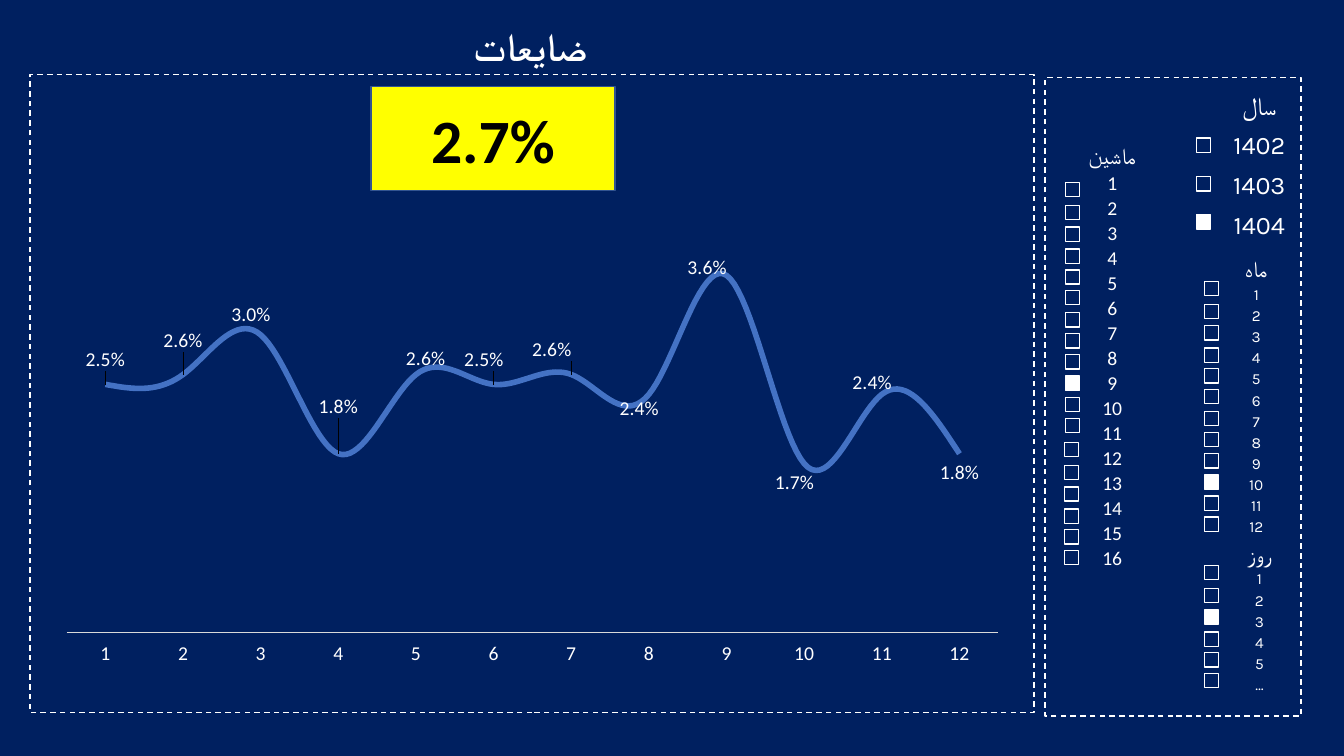
"""Build the waste dashboard slide with its filters, headline figure and monthly line chart."""
from dataclasses import dataclass

from lxml.etree import SubElement
from pptx import Presentation
from pptx.chart.chart import Chart
from pptx.chart.data import CategoryChartData
from pptx.dml.color import RGBColor
from pptx.enum.chart import XL_CHART_TYPE as ChartType
from pptx.enum.chart import XL_LABEL_POSITION as LabelPosition
from pptx.enum.chart import XL_TICK_LABEL_POSITION as TickLabels
from pptx.enum.chart import XL_TICK_MARK as TickMark
from pptx.enum.dml import MSO_LINE as Dash
from pptx.enum.shapes import MSO_SHAPE as ShapeKind
from pptx.enum.text import MSO_ANCHOR as Anchor
from pptx.enum.text import MSO_AUTO_SIZE as AutoSize
from pptx.enum.text import PP_ALIGN as Align
from pptx.oxml import parse_xml
from pptx.oxml.ns import nsdecls, qn
from pptx.shapes.autoshape import Shape
from pptx.slide import Slide
from pptx.text.text import Font, _Paragraph as Paragraph
from pptx.util import Cm, Pt

WHITE, NAVY, BLUE = "FFFFFF", "002060", "4472C4"
PLAIN_TABLE = "{2D5ABB26-0587-4C30-8999-92F81FD0307C}"
BOX_SIZE = 0.36
BOX_OFFSETS = (0, 0.58, 1.12, 1.68, 2.2, 2.72, 3.28, 3.81, 4.34, 4.88, 5.41, 5.94)
YEAR_OFFSETS = (0, 0.97, 1.93)


@dataclass
class Panel:
    left: float
    top: float
    width: float
    height: float
    line: str = WHITE
    fill: str | None = None
    dashed: bool = False


@dataclass
class Filter:
    heading: str
    options: list[str]
    left: float
    top: float
    width: float
    heading_height: float
    row_height: float
    heading_size: int
    size: int
    font: str = "Karla"
    anchor: Anchor = Anchor.BOTTOM


@dataclass
class CheckColumn:
    left: float
    top: float
    offsets: tuple[float, ...]
    ticked: int | None = None


@dataclass
class MonthPoint:
    value: float
    shift_x: float
    shift_y: float


def numbers(last: int) -> list[str]:
    return [str(number) for number in range(1, last + 1)]


FILTERS = [
    Filter("سال", ["1402", "1403", "1404"], 30.81, 2.18, 1.85, 1, 1, 18, 18, anchor=Anchor.MIDDLE),
    Filter("ماه", numbers(12), 30.81, 6.45, 1.7, 0.53, 0.53, 16, 11),
    Filter("روز", numbers(5) + ["…"], 30.89, 13.61, 1.7, 0.53, 0.53, 16, 11),
    Filter("ماشین", numbers(16), 27.18, 3.58, 1.7, 0.71, 0.63, 16, 14, font="Calibri"),
]
CHECK_COLUMNS = [
    CheckColumn(30.15, 3.48, YEAR_OFFSETS, ticked=2),
    CheckColumn(30.35, 7.09, BOX_OFFSETS, ticked=9),
    CheckColumn(30.35, 14.25, BOX_OFFSETS[:6], ticked=2),
    CheckColumn(26.85, 4.6, BOX_OFFSETS, ticked=9),
    CheckColumn(26.82, 11.15, BOX_OFFSETS[:6]),
]
MONTHS = [
    MonthPoint(0.025, 0, -0.02), MonthPoint(0.026, 0, -0.04),
    MonthPoint(0.03, -0.01, -0.01), MonthPoint(0.018, 0, -0.07),
    MonthPoint(0.026, 0.01, 0), MonthPoint(0.025, -0.01, -0.02),
    MonthPoint(0.026, -0.02, -0.02), MonthPoint(0.024, -0.01, 0.07),
    MonthPoint(0.036, -0.02, 0.02), MonthPoint(0.017, -0.01, 0.08),
    MonthPoint(0.024, -0.01, 0.01), MonthPoint(0.018, 0, 0.08),
]


def colour(value: str) -> RGBColor:
    return RGBColor.from_string(value)


def style_font(font: Font, name: str, size: int, shade: str = WHITE, bold: bool = False) -> None:
    font.name, font.size, font.bold = name, Pt(size), bold
    font.color.rgb = colour(shade)


def write(para: Paragraph, text: str, name: str, size: int, shade: str = WHITE, bold: bool = False) -> None:
    span = para.add_run()
    span.text = text
    style_font(span.font, name, size, shade, bold)
    SubElement(span.font._element, qn("a:cs"), typeface=name)


def draw_panel(page: Slide, panel: Panel) -> Shape:
    box = page.shapes.add_shape(
        ShapeKind.RECTANGLE, Cm(panel.left), Cm(panel.top), Cm(panel.width), Cm(panel.height))
    box.shadow.inherit = False
    if panel.fill:
        box.fill.solid()
        box.fill.fore_color.rgb = colour(panel.fill)
    else:
        box.fill.background()
    box.line.color.rgb = colour(panel.line)
    box.line.width = Pt(1)
    if panel.dashed:
        box.line.dash_style = Dash.DASH
    return box


def draw_filter(page: Slide, item: Filter) -> None:
    height = item.heading_height + item.row_height * len(item.options)
    frame = page.shapes.add_table(
        len(item.options) + 1, 1, Cm(item.left), Cm(item.top), Cm(item.width), Cm(height))
    table = frame.table
    table.first_row = table.horz_banding = False
    frame.element.xpath(".//a:tableStyleId")[0].text = PLAIN_TABLE
    for index, text in enumerate([item.heading, *item.options]):
        is_heading = index == 0
        table.rows[index].height = Cm(item.heading_height if is_heading else item.row_height)
        cell = table.cell(index, 0)
        cell.fill.background()
        cell.vertical_anchor = item.anchor
        cell.margin_left = cell.margin_right = cell.margin_top = Cm(0.02)
        cell.margin_bottom = 0
        para = cell.text_frame.paragraphs[0]
        para.alignment = Align.CENTER
        if is_heading:
            para._p.get_or_add_pPr().set("rtl", "1")
            write(para, text, "Karla", item.heading_size)
        else:
            write(para, text, item.font, item.size)


def draw_checks(page: Slide, column: CheckColumn) -> None:
    for index, offset in enumerate(column.offsets):
        fill = WHITE if index == column.ticked else None
        draw_panel(page, Panel(column.left, column.top + offset, BOX_SIZE, BOX_SIZE, fill=fill))


def manual_layout(**values: float | str):
    fields = "".join(f'<c:{name} val="{value}"/>' for name, value in values.items())
    return parse_xml(f'<c:layout {nsdecls("c")}><c:manualLayout>{fields}</c:manualLayout></c:layout>')


def place_plot(chart: Chart) -> None:
    area = chart.element.xpath(".//c:plotArea")[0]
    for layout in area.findall(qn("c:layout")):
        area.remove(layout)
    area.insert(0, manual_layout(
        layoutTarget="inner", xMode="edge", yMode="edge", x=0.02, y=0.02, w=0.96, h=0.9))


def draw_chart(page: Slide) -> None:
    data = CategoryChartData(number_format="0.0%")
    data.categories = numbers(12)
    data.add_series("Series 1", [month.value for month in MONTHS])
    chart = page.shapes.add_chart(
        ChartType.LINE, Cm(1.19), Cm(5.72), Cm(24.46), Cm(11.1), data).chart
    chart.has_legend = chart.has_title = False
    style_font(chart.font, "Calibri", 10, "000000")
    place_plot(chart)
    months, waste = chart.category_axis, chart.value_axis
    months.major_tick_mark = months.minor_tick_mark = TickMark.NONE
    months.tick_label_position = TickLabels.LOW
    months.format.line.color.rgb = colour("D9D9D9")
    months.format.line.width = Pt(0.75)
    style_font(months.tick_labels.font, "Calibri", 14)
    waste.minimum_scale, waste.maximum_scale = 0, 0.04
    waste.has_major_gridlines = waste.visible = False
    chart.plots[0].vary_by_categories = False
    series = chart.plots[0].series[0]
    series.smooth = True
    series.format.line.color.rgb = colour(BLUE)
    series.format.line.width = Pt(4)
    labels = series.data_labels
    labels.show_value = True
    labels.number_format, labels.number_format_is_linked = "0.0%", False
    style_font(labels.font, "Calibri", 14)
    for index, month in enumerate(MONTHS):
        label = series.points[index].data_label
        style_font(label.font, "Calibri", 14)
        label.position = LabelPosition.ABOVE
    for mark, month in zip(chart.element.xpath(".//c:dLbl"), MONTHS):
        mark.insert(1, manual_layout(x=month.shift_x, y=month.shift_y))


def main() -> None:
    deck = Presentation()
    deck.slide_width, deck.slide_height = Cm(33.87), Cm(19.05)
    page = deck.slides.add_slide(deck.slide_layouts[5])
    page.background.fill.solid()
    page.background.fill.fore_color.rgb = colour(NAVY)
    title = page.shapes.title
    title.left, title.top, title.width, title.height = Cm(11.68), Cm(0.43), Cm(4.19), Cm(1.45)
    title.text_frame.word_wrap = False
    title.text_frame.auto_size = AutoSize.SHAPE_TO_FIT_TEXT
    title.text_frame.vertical_anchor = Anchor.TOP
    para = title.text_frame.paragraphs[0]
    para.alignment = Align.LEFT
    write(para, "ضایعات", "Karla", 28, bold=True)
    draw_panel(page, Panel(0.76, 1.88, 25.3, 16.08, dashed=True))
    draw_panel(page, Panel(26.34, 1.96, 6.45, 16.08, dashed=True))
    total = draw_panel(page, Panel(9.35, 2.18, 6.15, 2.62, line="325491", fill="FFFF00"))
    total.text_frame.vertical_anchor = Anchor.MIDDLE
    para = total.text_frame.paragraphs[0]
    para.alignment = Align.CENTER
    write(para, "2.7%", "Calibri", 44, "000000", bold=True)
    for item in FILTERS:
        draw_filter(page, item)
    for column in CHECK_COLUMNS:
        draw_checks(page, column)
    draw_chart(page)
    deck.save("out.pptx")


if __name__ == "__main__":
    main()
